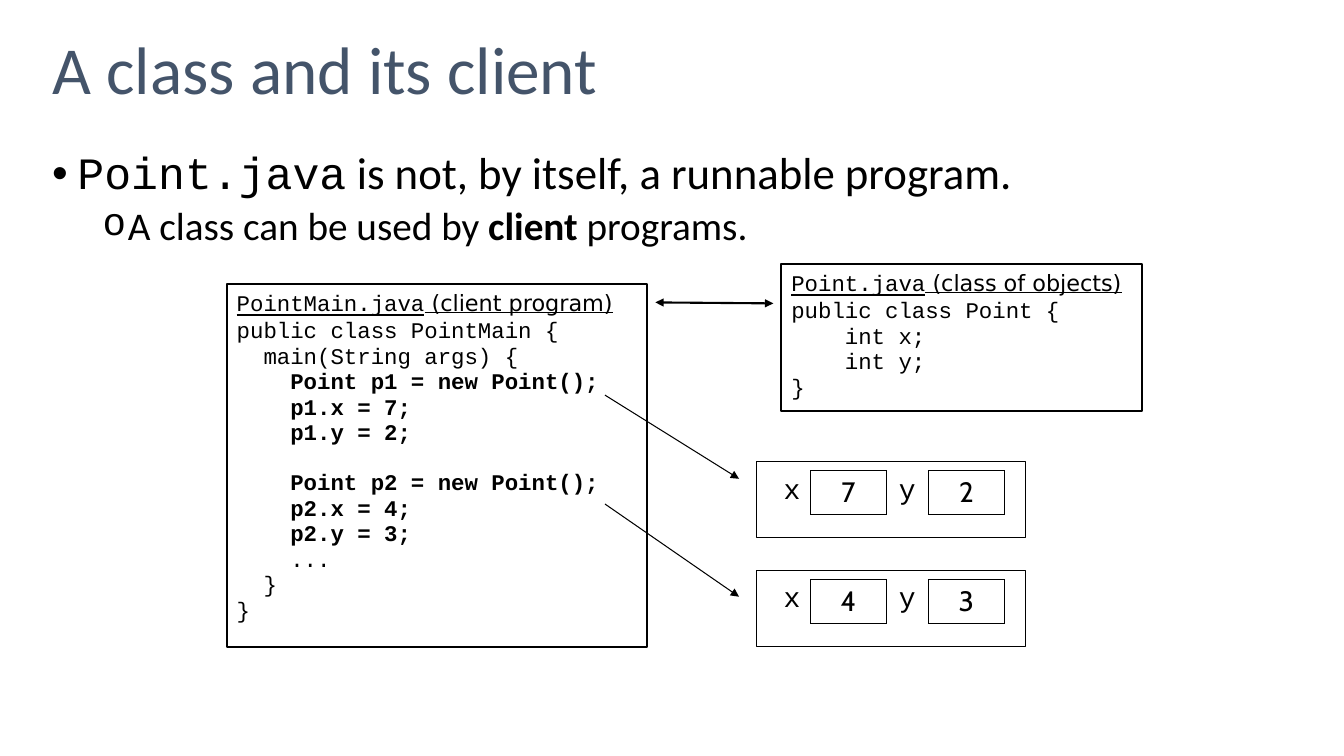
from pptx import Presentation
from pptx.dml.color import RGBColor
from pptx.enum.shapes import MSO_CONNECTOR, MSO_SHAPE
from pptx.enum.text import MSO_ANCHOR, PP_ALIGN
from pptx.oxml.ns import qn
from pptx.util import Inches, Pt
from lxml.etree import SubElement

BLACK = RGBColor(0, 0, 0)
SLATE = RGBColor(0x44, 0x54, 0x6A)
SANS, MONO, LABEL, DIGIT = "Calibri", "Courier New", "DejaVu Sans", "Cabin"

TITLE = "A class and its client"
BULLETS = [
    ("•", 0.25, 32, 10, [("Point.java", MONO, False),
                         (" is not, by itself, a runnable program.", SANS, False)]),
    ("o", 0.75, 28, 5, [("A class can be used by ", SANS, False),
                        ("client", SANS, True), (" programs.", SANS, False)]),
]
CLIENT_CODE = [
    "public class PointMain {",
    "  main(String args) {",
    "    Point p1 = new Point();",
    "    p1.x = 7;",
    "    p1.y = 2;",
    "    Point p2 = new Point();",
    "    p2.x = 4;",
    "    p2.y = 3;",
    "    ...",
    "  }",
    "}",
]
CLASS_CODE = ["public class Point {", "    int x;", "    int y;", "}"]
CODE_BOXES = [
    ((2.25, 2.82, 4.17, 3.6), "PointMain.java", " (client program)", CLIENT_CODE),
    ((7.75, 2.62, 3.58, 1.46), "Point.java", " (class of objects)", CLASS_CODE),
]
BOLD_LINES = CLIENT_CODE[2:8]
SECTION_START = CLIENT_CODE[5]
CODE_GAP, SECTION_GAP = 8.6, 26.2

OBJECTS = [("x", "7", "y", "2"), ("x", "4", "y", "3")]
OBJECT_LEFT, OBJECT_TOP, OBJECT_PITCH = 7.5, 4.58, 1.08
FIELD_WIDTHS = [0.37, 0.75, 0.42, 0.75]
FIELD_HEIGHT = 0.43
ARROWS = [
    ((6.5, 3), (7.67, 3.01), 1.5, ("headEnd", "tailEnd")),
    ((6, 3.92), (7.33, 4.75), 0.75, ("tailEnd",)),
    ((6, 5), (7.33, 5.92), 0.75, ("tailEnd",)),
]


def place(shape, left, top, width, height):
    shape.left, shape.top = Inches(left), Inches(top)
    shape.width, shape.height = Inches(width), Inches(height)


def add_run(paragraph, text, font, size, bold=False, underline=False, color=BLACK):
    run = paragraph.add_run()
    run.text = text
    run.font.name, run.font.size = font, Pt(size)
    run.font.bold, run.font.underline = bold, underline
    run.font.color.rgb = color


def next_paragraph(frame):
    first = frame.paragraphs[0]
    return frame.add_paragraph() if first.runs else first


def hang(paragraph, margin):
    properties = paragraph._p.get_or_add_pPr()
    properties.set("marL", str(Inches(margin)))
    properties.set("indent", str(Inches(-0.25)))
    return properties


def add_box(slide, bounds, line_width):
    box = slide.shapes.add_shape(MSO_SHAPE.RECTANGLE, *map(Inches, bounds))
    box.shadow.inherit = False
    box.fill.background()
    box.line.color.rgb = BLACK
    box.line.width = Pt(line_width)
    return box


def add_title(slide):
    title = slide.shapes.title
    place(title, 0.42, 0, 12.5, 1.45)
    frame = title.text_frame
    frame.vertical_anchor = MSO_ANCHOR.MIDDLE
    paragraph = frame.paragraphs[0]
    paragraph.alignment, paragraph.line_spacing = PP_ALIGN.LEFT, 0.9
    add_run(paragraph, TITLE, SANS, 48, color=SLATE)


def add_bullets(slide):
    bounds = map(Inches, (0.42, 1.45, 12.5, 5.66))
    frame = slide.shapes.add_textbox(*bounds).text_frame
    frame.word_wrap = True
    for mark, margin, size, gap, parts in BULLETS:
        paragraph = next_paragraph(frame)
        paragraph.line_spacing, paragraph.space_before = 0.9, Pt(gap)
        properties = hang(paragraph, margin)
        font = "Arial" if mark == "•" else MONO
        SubElement(properties, qn("a:buFont"), typeface=font)
        SubElement(properties, qn("a:buChar"), char=mark)
        for text, font, bold in parts:
            add_run(paragraph, text, font, size, bold)


def add_code_box(slide, bounds, file_name, role, code):
    frame = add_box(slide, bounds, 1.5).text_frame
    frame.word_wrap, frame.vertical_anchor = True, MSO_ANCHOR.TOP
    heading = frame.paragraphs[0]
    heading.alignment = PP_ALIGN.LEFT
    hang(heading, 0.25)
    add_run(heading, file_name, MONO, 16, underline=True)
    add_run(heading, role, LABEL, 16, underline=True)
    for line in code:
        paragraph = next_paragraph(frame)
        paragraph.alignment, paragraph.line_spacing = PP_ALIGN.LEFT, 0.5
        paragraph.space_before = Pt(SECTION_GAP if line == SECTION_START else CODE_GAP)
        hang(paragraph, 0.25)
        add_run(paragraph, line, MONO, 16, line in BOLD_LINES)


def set_borders(cell, visible_sides):
    properties = cell._tc.get_or_add_tcPr()
    for index, side in enumerate(("lnL", "lnR", "lnT", "lnB")):
        border = properties.makeelement(qn("a:" + side), {"w": str(Pt(1))})
        properties.insert(index, border)
        if side in visible_sides:
            fill = SubElement(border, qn("a:solidFill"))
            SubElement(fill, qn("a:srgbClr"), val=str(BLACK))
        else:
            SubElement(border, qn("a:noFill"))


def add_object(slide, top, fields):
    add_box(slide, (OBJECT_LEFT, top, 2.67, 0.75), 0.75)
    bounds = (OBJECT_LEFT + 0.17, top + 0.09, sum(FIELD_WIDTHS), FIELD_HEIGHT)
    table = slide.shapes.add_table(1, len(fields), *map(Inches, bounds)).table
    table.first_row = table.horz_banding = False
    borders = [("lnR",), ("lnL", "lnR", "lnT", "lnB")] * 2
    borders[2] = ("lnL", "lnR")
    for column, text in enumerate(fields):
        table.columns[column].width = Inches(FIELD_WIDTHS[column])
        cell = table.cell(0, column)
        cell.fill.background()
        set_borders(cell, borders[column])
        paragraph = cell.text_frame.paragraphs[0]
        paragraph.alignment = PP_ALIGN.CENTER
        add_run(paragraph, text, DIGIT if column % 2 else MONO, 20)


def add_arrow(slide, start, end, width, heads):
    arrow = slide.shapes.add_connector(MSO_CONNECTOR.STRAIGHT, *map(Inches, start + end))
    arrow.line.color.rgb = BLACK
    arrow.line.width = Pt(width)
    for head in heads:
        SubElement(arrow.line._get_or_add_ln(), qn("a:" + head), type="triangle")
    SubElement(arrow._element.spPr, qn("a:effectLst"))


def main():
    presentation = Presentation()
    presentation.slide_width, presentation.slide_height = Inches(13.33), Inches(7.5)
    slide = presentation.slides.add_slide(presentation.slide_layouts[5])
    add_title(slide)
    add_bullets(slide)
    for code_box in CODE_BOXES:
        add_code_box(slide, *code_box)
    for row, fields in enumerate(OBJECTS):
        add_object(slide, OBJECT_TOP + row * OBJECT_PITCH, fields)
    for arrow in ARROWS:
        add_arrow(slide, *arrow)
    presentation.save("out.pptx")


if __name__ == "__main__":
    main()
